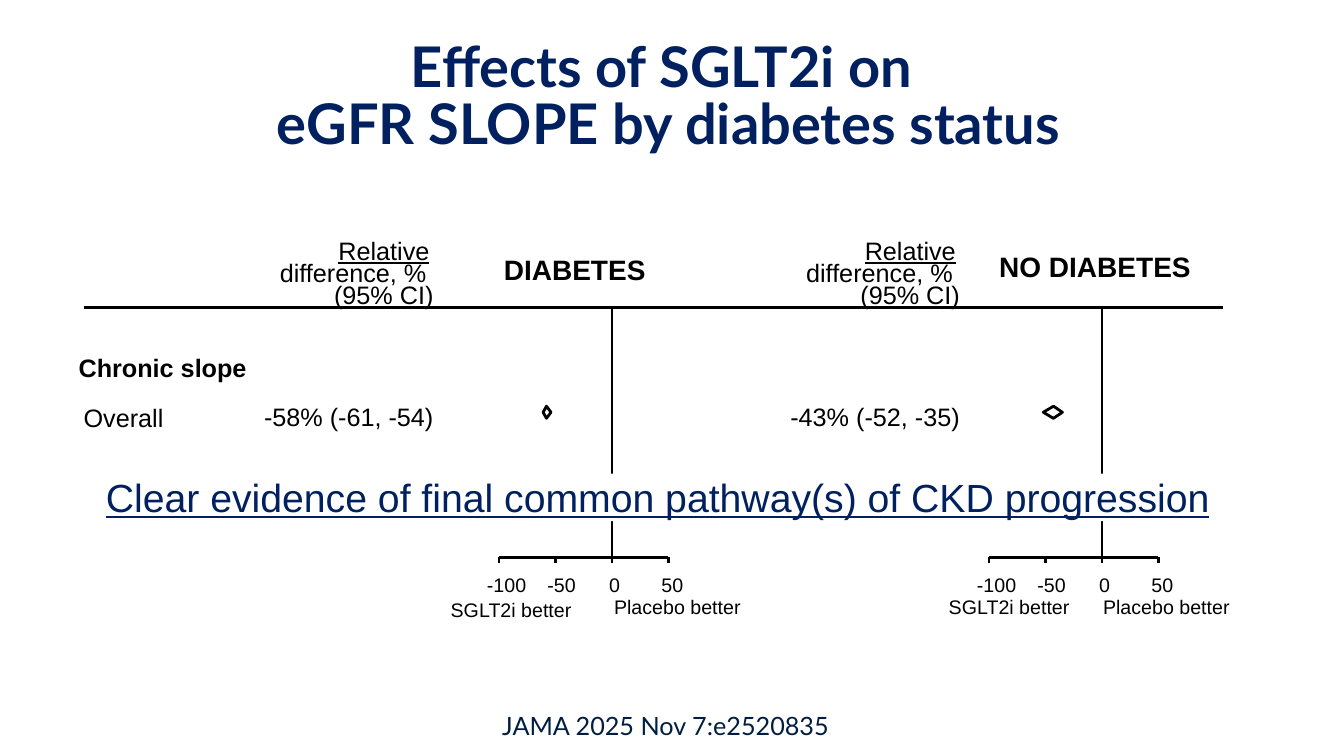
from dataclasses import dataclass

from lxml import etree
from pptx import Presentation, util as u
from pptx.dml import color as c
from pptx.enum import shapes as sh, text as t
from pptx.oxml import ns
from pptx.slide import Slide
from pptx.text import text as tx

HUES = {"ink": "000000", "navy": "002060", "deep": "011E41", "white": "FFFFFF"}
LEFT, RIGHT, MID = t.PP_ALIGN.LEFT, t.PP_ALIGN.RIGHT, t.PP_ALIGN.CENTER
FRAME = {"margin_left": 0, "margin_top": 0, "margin_right": 0, "margin_bottom": 0}

# Text formats
BODY = {"name": "Arial", "size": u.Pt(18)}
BOLD = BODY | {"bold": True}
LINED = BODY | {"underline": True}
HEAD = BOLD | {"size": u.Pt(20)}
SMALL = BODY | {"size": u.Pt(14)}
TITLE = {"name": "Lato", "size": u.Pt(40), "bold": True}
CITE = {"name": "Lato", "size": u.Pt(18)}
CLAIM = LINED | {"size": u.Pt(28)}

# Shared plot measures
RULE_Y, AXIS_Y, ROW_Y = 3.05, 5.53, 4.09
STEP, UNIT = 0.56, 50


@dataclass
class Label:
    text: str
    x: float
    y: float
    w: float
    h: float
    form: dict
    align: t.PP_ALIGN = LEFT


@dataclass
class Panel:
    head: Label
    zero: float    # x of the zero line
    edge: float    # right edge of the estimate column
    value: int
    low: int
    high: int
    better: tuple[Label, Label]


PANELS = [
    Panel(Label("DIABETES", 4.99, 2.51, 1.42, 0.34, HEAD, MID), 6.07, 4.3, -58, -61, -54,
          (Label("SGLT2i better", 4.47, 5.93, 1.2, 0.24, SMALL),
           Label("Placebo better", 6.09, 5.9, 1.26, 0.24, SMALL))),
    Panel(Label("NO DIABETES", 9.9, 2.48, 1.92, 0.34, HEAD, MID), 10.93, 9.52, -43, -52, -35,
          (Label("SGLT2i better", 9.41, 5.9, 1.2, 0.24, SMALL),
           Label("Placebo better", 10.94, 5.9, 1.26, 0.24, SMALL))),
]
ROWS = [Label("Chronic slope", 0.78, 3.5, 1.75, 0.3, BOLD),
        Label("Overall", 0.83, 3.99, 0.8, 0.3, BODY)]
# Axis value, label offset from the zero line, label width
TICKS = [(-100, -1.24, 0.44), (-50, -0.64, 0.34), (0, -0.03, 0.15), (50, 0.49, 0.27)]


def apply(obj: object, form: dict) -> None:
    for key, val in form.items():
        setattr(obj, key, val)


def write(frame: tx.TextFrame, lines: list[str], form: dict, hue: str, align: t.PP_ALIGN) -> None:
    apply(frame, FRAME)
    para = frame.paragraphs[0]
    para.alignment = align
    for i, line in enumerate(lines):
        if i:
            para.add_line_break()
        run = para.add_run()
        run.text = line
        apply(run.font, form)
        run.font.color.rgb = c.RGBColor.from_string(HUES[hue])


def label(slide: Slide, item: Label) -> None:
    box = slide.shapes.add_textbox(*map(u.Inches, (item.x, item.y, item.w, item.h)))
    box.text_frame.word_wrap = False
    box.text_frame.auto_size = t.MSO_AUTO_SIZE.SHAPE_TO_FIT_TEXT
    write(box.text_frame, [item.text], item.form, "ink", item.align)


def line(slide: Slide, x1: float, y1: float, x2: float, y2: float) -> None:
    rule = slide.shapes.add_connector(sh.MSO_CONNECTOR.STRAIGHT, *map(u.Inches, (x1, y1, x2, y2)))
    rule.line.color.rgb = c.RGBColor.from_string(HUES["ink"])
    rule.line.width = u.Pt(2)
    etree.SubElement(rule._element.spPr, ns.qn("a:effectLst"))


def band(slide: Slide, item: Label, hue: str, anchor: t.MSO_ANCHOR) -> None:
    box = slide.shapes.add_shape(sh.MSO_SHAPE.RECTANGLE,
                                 *map(u.Inches, (item.x, item.y, item.w, item.h)))
    box.shadow.inherit = False
    box.fill.solid()
    box.fill.fore_color.rgb = c.RGBColor.from_string(HUES["white"])
    box.line.fill.background()
    box.text_frame.word_wrap = True
    box.text_frame.vertical_anchor = anchor
    write(box.text_frame, [item.text], item.form, hue, item.align)


def diamond(slide: Slide, panel: Panel) -> None:
    low, mid, high = (panel.zero + v * STEP / UNIT for v in (panel.low, panel.value, panel.high))
    spots = [(low, ROW_Y), (mid, ROW_Y + 0.06), (high, ROW_Y), (mid, ROW_Y - 0.06)]
    first, *rest = [(u.Inches(x), u.Inches(y)) for x, y in spots]
    pen = slide.shapes.build_freeform(*first)
    pen.add_line_segments(rest, close=True)
    mark = pen.convert_to_shape()
    mark.shadow.inherit = False
    mark.fill.background()
    mark.line.color.rgb = c.RGBColor.from_string(HUES["ink"])
    mark.line.width = u.Pt(2)


def plot(slide: Slide, panel: Panel) -> None:
    # Axis, ticks and zero line
    zero, edge = panel.zero, panel.edge
    line(slide, zero, AXIS_Y, zero, RULE_Y)
    line(slide, zero - 2 * STEP, AXIS_Y, zero + STEP, AXIS_Y)
    for val, shift, width in TICKS:
        x = zero + val * STEP / UNIT
        line(slide, x, AXIS_Y, x, AXIS_Y + 0.06)
        label(slide, Label(str(val), zero + shift, 5.68, width, 0.24, SMALL))
    # Headings and estimate
    for text, gap, y, width, form in [
        ("Relative", 0.04, 2.33, 0.91, LINED),
        ("difference, %", 0.07, 2.55, 1.47, BODY),
        ("(95% CI)", 0, 2.77, 1, BODY),
        (f"{panel.value}% ({panel.low}, {panel.high})", 0, 3.98, 1.7, BODY),
    ]:
        label(slide, Label(text, edge - gap - width, y, width, 0.3, form, RIGHT))
    for item in (panel.head, *panel.better):
        label(slide, item)
    diamond(slide, panel)


def main() -> None:
    deck = Presentation()
    deck.slide_width, deck.slide_height = u.Inches(13.33), u.Inches(7.5)
    slide = deck.slides.add_slide(deck.slide_layouts[5])

    # Title
    title = slide.shapes.title
    apply(title, {"left": u.Inches(0.63), "top": u.Inches(0.68),
                  "width": u.Inches(12), "height": u.Inches(0.87)})
    apply(title.text_frame, {"vertical_anchor": t.MSO_ANCHOR.BOTTOM, "word_wrap": True,
                             "auto_size": t.MSO_AUTO_SIZE.NONE})
    write(title.text_frame, ["Effects of SGLT2i on ", "eGFR SLOPE by diabetes status"],
          TITLE, "navy", MID)
    title.text_frame.paragraphs[0].line_spacing = 0.85

    # Forest plot
    line(slide, 0.83, RULE_Y, 12.13, RULE_Y)
    for row in ROWS:
        label(slide, row)
    for panel in PANELS:
        plot(slide, panel)

    # Citation and conclusion
    band(slide, Label("JAMA 2025 Nov 7:e2520835", 4.98, 6.78, 3.38, 0.57, CITE),
         "deep", t.MSO_ANCHOR.BOTTOM)
    band(slide, Label("Clear evidence of final common pathway(s) of CKD progression",
                      1.05, 4.7, 11.09, 0.47, CLAIM), "navy", t.MSO_ANCHOR.TOP)
    deck.save("out.pptx")


if __name__ == "__main__":
    main()
